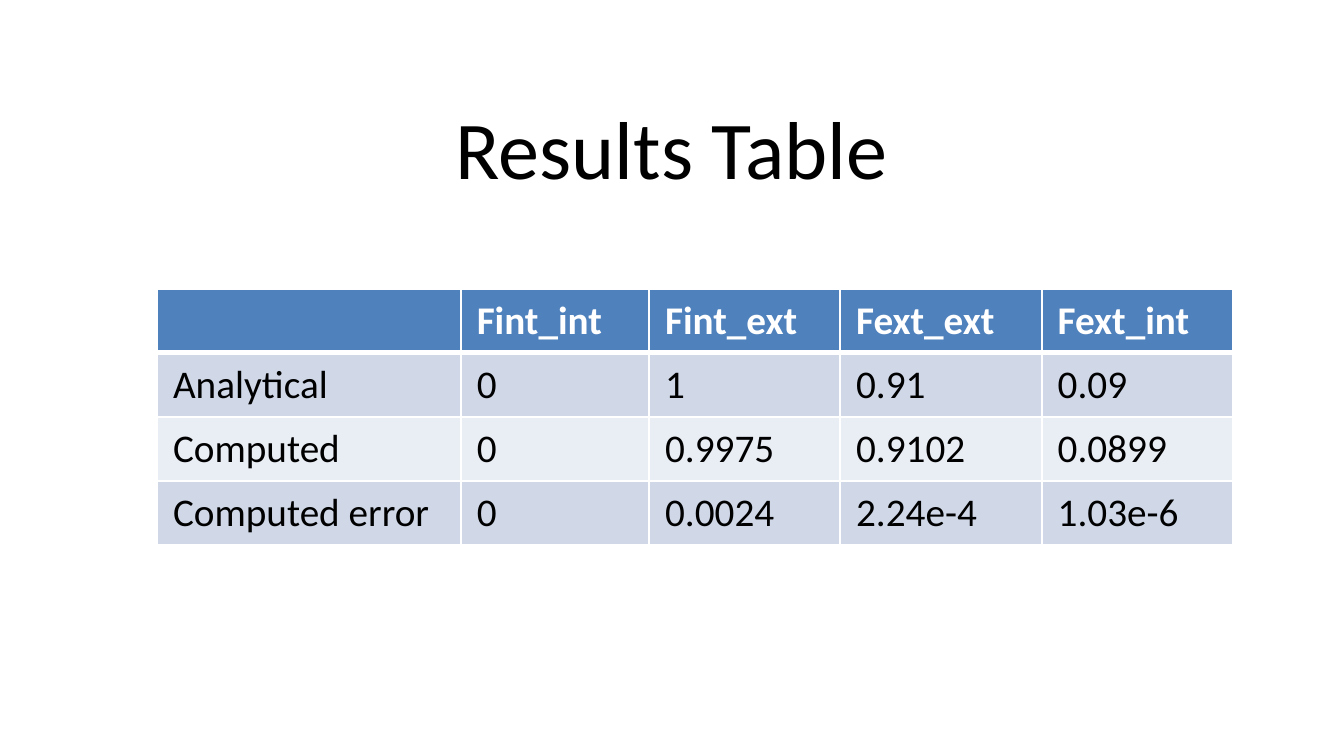
from lxml import etree
from pptx import Presentation
from pptx.dml.color import RGBColor
from pptx.enum.text import MSO_ANCHOR, PP_ALIGN
from pptx.oxml.ns import qn
from pptx.util import Cm, Pt

CENTER = PP_ALIGN.CENTER
MIDDLE = MSO_ANCHOR.MIDDLE

BLACK = RGBColor(0x00, 0x00, 0x00)
WHITE = RGBColor(0xFF, 0xFF, 0xFF)
HEADER_BLUE = RGBColor(0x4F, 0x81, 0xBD)
BAND_DARK = RGBColor(0xD0, 0xD8, 0xE8)
BAND_LIGHT = RGBColor(0xE9, 0xED, 0xF4)

FONT = "Calibri"
TITLE_ONLY = 5
COLUMN_WIDTHS = (5.74, 3.56, 3.61, 3.81, 3.61)
RESULTS = (
    ("", "Fint_int", "Fint_ext", "Fext_ext", "Fext_int"),
    ("Analytical", "0", "1", "0.91", "0.09"),
    ("Computed", "0", "0.9975", "0.9102", "0.0899"),
    ("Computed error", "0", "0.0024", "2.24e-4", "1.03e-6"),
)


def format_runs(paragraph, size, color, bold=False):
    """Apply one font style to every run of a paragraph."""
    for run in paragraph.runs:
        run.font.name = FONT
        run.font.size = Pt(size)
        run.font.bold = bold
        run.font.color.rgb = color


def set_borders(cell, widths):
    """Draw white cell borders with the given width in points for each side."""
    properties = cell._tc.get_or_add_tcPr()
    for side, width in widths.items():
        line = etree.SubElement(properties, qn(f"a:ln{side}"), w=str(Pt(width)))
        fill = etree.SubElement(line, qn("a:solidFill"))
        etree.SubElement(fill, qn("a:srgbClr"), val=str(WHITE))


def add_title(slide, text, left, top, width, height):
    """Place and format the title placeholder."""
    title = slide.shapes.title
    title.left, title.top, title.width, title.height = left, top, width, height
    text_frame = title.text_frame
    text_frame.text = text
    text_frame.word_wrap = True
    text_frame.vertical_anchor = MIDDLE
    paragraph = text_frame.paragraphs[0]
    paragraph.alignment = CENTER
    format_runs(paragraph, 44, BLACK)


def fill_cell(cell, text, row):
    """Write and style one cell according to its row."""
    is_header = row == 0
    set_borders(cell, {
        "L": 1,
        "R": 1,
        "T": 3 if row == 1 else 1,
        "B": 3 if is_header else 1,
    })
    cell.fill.solid()
    band = BAND_DARK if row % 2 else BAND_LIGHT
    cell.fill.fore_color.rgb = HEADER_BLUE if is_header else band
    cell.margin_left = cell.margin_right = Cm(0.3)
    cell.margin_top = cell.margin_bottom = Cm(0.15)
    cell.text_frame.text = text
    format_runs(cell.text_frame.paragraphs[0], 21,
                WHITE if is_header else BLACK, is_header)


def add_results_table(slide, left, top, width, height):
    """Add the results table with a header row and banded body rows."""
    frame = slide.shapes.add_table(
        len(RESULTS), len(COLUMN_WIDTHS), left, top, width, height)
    table = frame.table
    for column, column_width in zip(table.columns, COLUMN_WIDTHS):
        column.width = Cm(column_width)
    for row, values in enumerate(RESULTS):
        for column, text in enumerate(values):
            fill_cell(table.cell(row, column), text, row)


def main():
    """Build the results slide and save it."""
    presentation = Presentation()
    presentation.slide_width = Cm(25.4)
    presentation.slide_height = Cm(14.29)
    slide = presentation.slides.add_slide(presentation.slide_layouts[TITLE_ONLY])
    add_title(slide, "Results Table", Cm(1.27), Cm(1.57), Cm(22.86), Cm(2.39))
    add_results_table(slide, Cm(2.97), Cm(5.46), Cm(sum(COLUMN_WIDTHS)), Cm(4.84))
    presentation.save("out.pptx")


if __name__ == "__main__":
    main()
